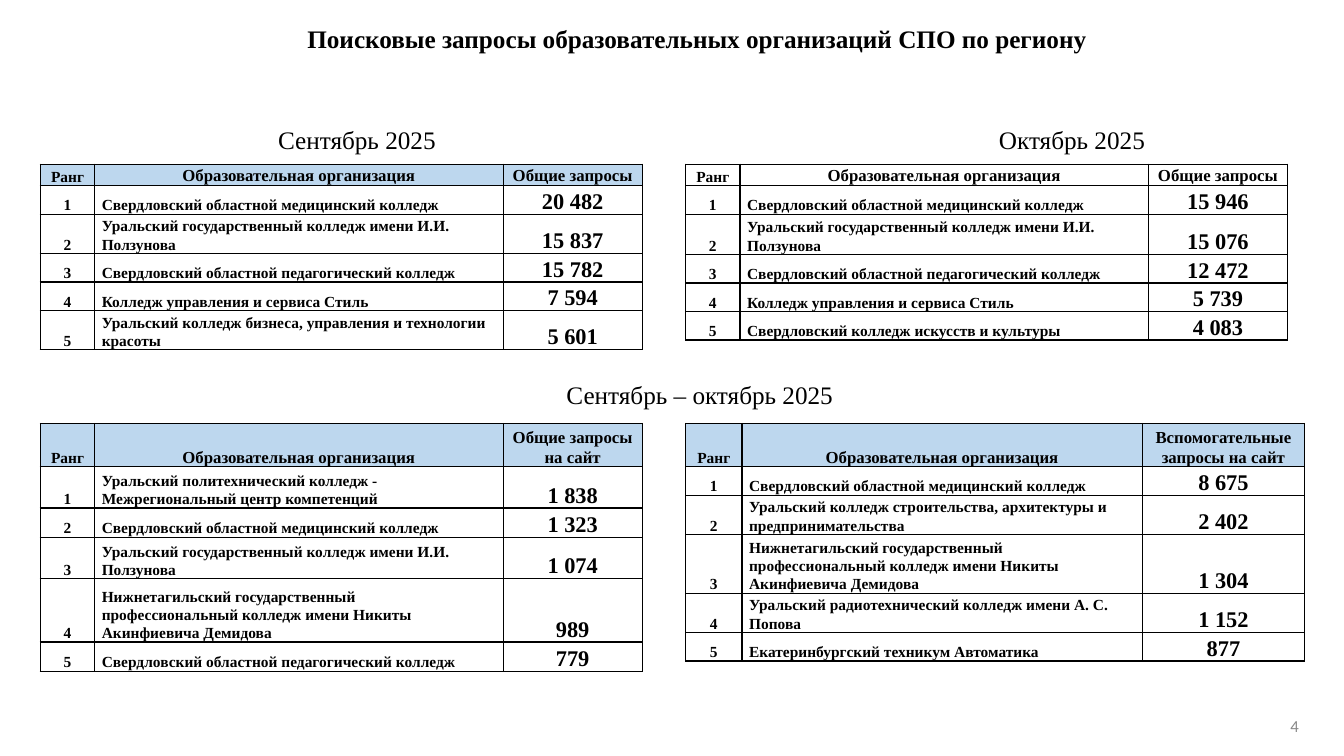
from lxml import etree
from pptx import Presentation
from pptx.dml.color import RGBColor
from pptx.enum.text import MSO_ANCHOR, PP_ALIGN
from pptx.oxml.ns import qn
from pptx.util import Inches, Pt

LEFT, MID, RIGHT = PP_ALIGN.LEFT, PP_ALIGN.CENTER, PP_ALIGN.RIGHT
TOP, CENTRE, BASE = MSO_ANCHOR.TOP, MSO_ANCHOR.MIDDLE, MSO_ANCHOR.BOTTOM

SERIF = "Times New Roman"
THEME = {
    "ink": "000000", "gray": "898989", "head": "BDD7EE", "plain": "FFFFFF",
    "title": {"name": SERIF, "size": Pt(18), "bold": True},
    "month": {"name": SERIF, "size": Pt(18), "bold": False},
    "page": {"name": "Calibri", "size": Pt(12), "bold": False},
    "small": {"name": SERIF, "size": Pt(11), "bold": True},
    "label": {"name": SERIF, "size": Pt(12), "bold": True},
    "count": {"name": SERIF, "size": Pt(16), "bold": True},
}

MEDIC = "Свердловский областной медицинский колледж"
STATE = "Уральский государственный колледж имени И.И. Ползунова"
TEACH = "Свердловский областной педагогический колледж"
STYLE = "Колледж управления и сервиса Стиль"
TAGIL = "Нижнетагильский государственный профессиональный колледж имени Никиты Акинфиевича Демидова"

NOTES = [
    ("Поисковые запросы образовательных организаций СПО по региону",
     2.95, 0.2, 8.03, "title", "ink", LEFT, CENTRE, 0.9, True),
    ("4", 9.98, 7, 3, "page", "gray", RIGHT, CENTRE, 1, True),
    ("Сентябрь 2025", 2.66, 1.18, 1.78, "month", "ink", LEFT, TOP, 1, False),
    ("Октябрь 2025", 9.81, 1.18, 1.66, "month", "ink", LEFT, TOP, 1, False),
    ("Сентябрь – октябрь 2025", 5.52, 3.71, 2.87, "month", "ink", LEFT, TOP, 1, False),
]

WIDE = [0.54, 4.05, 1.38]
TABLES = [
    (0.4, 1.63, WIDE, [0.21, 0.28, 0.39, 0.28, 0.28, 0.39], "head", "Общие запросы", [
        (MEDIC, "20 482"),
        (STATE, "15 837"),
        (TEACH, "15 782"),
        (STYLE, "7 594"),
        ("Уральский колледж бизнеса, управления и технологии красоты", "5 601"),
    ]),
    (6.8, 1.63, WIDE, [0.21, 0.28, 0.4, 0.28, 0.28, 0.28], "plain", "Общие запросы", [
        (MEDIC, "15 946"),
        (STATE, "15 076"),
        (TEACH, "12 472"),
        (STYLE, "5 739"),
        ("Свердловский колледж искусств и культуры", "4 083"),
    ]),
    (0.4, 4.2, WIDE, [0.43, 0.41, 0.29, 0.41, 0.63, 0.29], "head", "Общие запросы на сайт", [
        ("Уральский политехнический колледж - Межрегиональный центр компетенций", "1 838"),
        (MEDIC, "1 323"),
        (STATE, "1 074"),
        (TAGIL, "989"),
        (TEACH, "779"),
    ]),
    (6.8, 4.2, [0.56, 3.97, 1.61], [0.43, 0.28, 0.39, 0.58, 0.39, 0.28], "head",
     "Вспомогательные запросы на сайт", [
        (MEDIC, "8 675"),
        ("Уральский колледж строительства, архитектуры и предпринимательства", "2 402"),
        (TAGIL, "1 304"),
        ("Уральский радиотехнический колледж имени А. С. Попова", "1 152"),
        ("Екатеринбургский техникум Автоматика", "877"),
    ]),
]


def write(frame, text, kind, tint, align, space):
    para = frame.paragraphs[0]
    para.alignment = align
    para.line_spacing = space
    run = para.add_run()
    run.text = text
    for key, value in THEME[kind].items():
        setattr(run.font, key, value)
    run.font.color.rgb = RGBColor.from_string(THEME[tint])


def border(cell):
    props = cell._tc.get_or_add_tcPr()
    for i, side in enumerate(("a:lnL", "a:lnR", "a:lnT", "a:lnB")):
        line = etree.Element(qn(side), w=str(Pt(1)))
        fill = etree.SubElement(line, qn("a:solidFill"))
        etree.SubElement(fill, qn("a:srgbClr"), val=THEME["ink"])
        props.insert(i, line)


deck = Presentation()
deck.slide_width, deck.slide_height = Inches(13.33), Inches(7.5)
slide = deck.slides.add_slide(deck.slide_layouts[6])

for text, x, y, width, kind, tint, align, anchor, wrap in [n[:8] + n[9:] for n in NOTES]:
    space = 0.9 if kind == "title" else 1.0
    box = slide.shapes.add_textbox(Inches(x), Inches(y), Inches(width), Inches(0.4))
    box.text_frame.word_wrap = wrap
    box.text_frame.vertical_anchor = anchor
    write(box.text_frame, text, kind, tint, align, space)

CELL = {"margin_left": Inches(0.07), "margin_right": Inches(0.07),
        "margin_top": 0, "margin_bottom": 0, "vertical_anchor": BASE}

for x, y, widths, heights, shade, total, ranks in TABLES:
    grid = slide.shapes.add_table(
        len(heights), len(widths), Inches(x), Inches(y),
        Inches(sum(widths)), Inches(sum(heights))).table
    grid.first_row = grid.horz_banding = False
    for col, width in zip(grid.columns, widths):
        col.width = Inches(width)
    for row, height in zip(grid.rows, heights):
        row.height = Inches(height)
    rows = [("Ранг", "Образовательная организация", total)]
    rows += [(str(i), name, count) for i, (name, count) in enumerate(ranks, 1)]
    for r, row in enumerate(rows):
        kinds = ("small", "small", "count") if r else ("small", "label", "label")
        for c, text in enumerate(row):
            cell = grid.cell(r, c)
            for key, value in CELL.items():
                setattr(cell, key, value)
            cell.fill.solid()
            cell.fill.fore_color.rgb = RGBColor.from_string(THEME["plain" if r else shade])
            border(cell)
            align = LEFT if r and c == 1 else MID
            write(cell.text_frame, text, kinds[c], "ink", align, 1.06)

deck.save("out.pptx")
